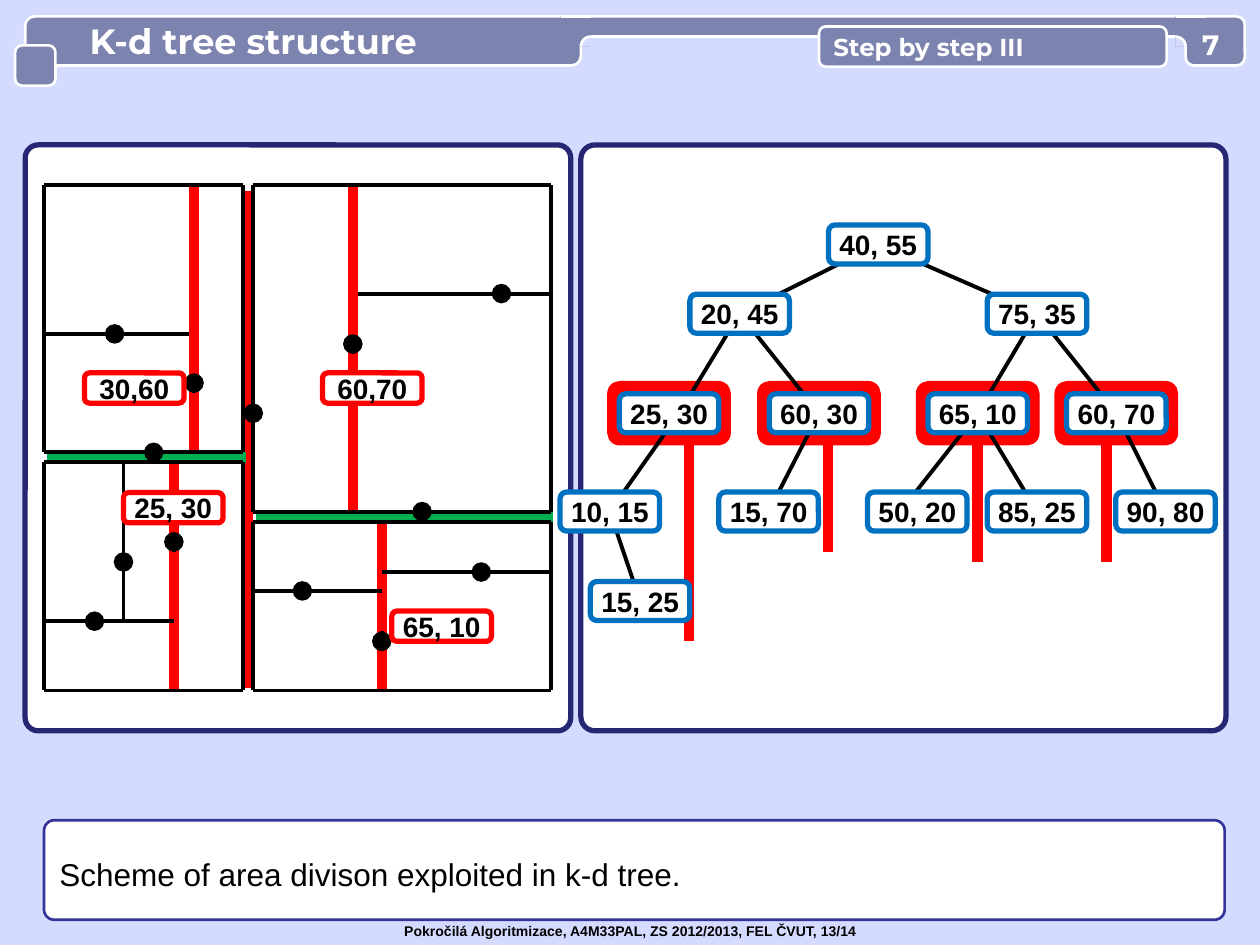
import math
import pptx
import pptx.dml.color
import pptx.enum.shapes
import pptx.enum.text
import pptx.oxml.ns
import pptx.util
from lxml import etree
from pptx.util import Inches

WHITE, BLACK, RED, GREEN = "FFFFFF", "000000", "FF0000", "00B050"
BLUE, NAVY, SLATE, PALE = "0070C0", "262673", "7D83AF", "D5DAFF"
ALIGN = pptx.enum.text.PP_ALIGN
PRESET = pptx.enum.shapes.MSO_SHAPE


def color(value):
    return pptx.dml.color.RGBColor.from_string(value)


def assign(target, values):
    for name, value in values.items():
        setattr(target, name, value)


def paint(shape, fill=None, line=None, width=1.5):
    shape.shadow.inherit = False
    if fill:
        shape.fill.solid()
        shape.fill.fore_color.rgb = color(fill)
    else:
        shape.fill.background()
    if line:
        shape.line.color.rgb = color(line)
        shape.line.width = pptx.util.Pt(width)
    else:
        shape.line.fill.background()


def add_box(page, box, fill, line=None, width=1.5, round_by=None, preset=PRESET.ROUNDED_RECTANGLE):
    shape = page.shapes.add_shape(preset, *map(Inches, box))
    if round_by is not None:
        shape.adjustments[0] = round_by
    paint(shape, fill, line, width)
    return shape


def write(shape, text, size, ink=BLACK, family="Arial", bold=True, align=ALIGN.LEFT,
          margins=(0.1, 0.05, 0.1, 0.05), spacing=1.0, wrap=True):
    left, top, right, bottom = map(Inches, margins)
    assign(shape.text_frame, {
        "margin_left": left, "margin_top": top, "margin_right": right, "margin_bottom": bottom,
        "word_wrap": wrap, "vertical_anchor": pptx.enum.text.MSO_ANCHOR.MIDDLE})
    para = shape.text_frame.paragraphs[0]
    assign(para, {"alignment": align, "line_spacing": spacing})
    span = para.add_run()
    span.text = text
    assign(span.font, {"size": pptx.util.Pt(size), "bold": bold, "name": family})
    span.font.color.rgb = color(ink)


def add_line(page, start, end, ink=BLACK, width=2.25, dot=False):
    line = page.shapes.add_connector(
        pptx.enum.shapes.MSO_CONNECTOR.STRAIGHT, *map(Inches, (*start, *end)))
    line.line.color.rgb = color(ink)
    line.line.width = pptx.util.Pt(width)
    if dot:
        etree.SubElement(line.line._get_or_add_ln(), pptx.oxml.ns.qn("a:tailEnd"),
                         type="oval", w="lg", len="lg")
    etree.SubElement(line._element.spPr, pptx.oxml.ns.qn("a:effectLst"))


def add_label(page, box, text, line):
    write(add_box(page, box, WHITE, line, 3), text, 16, align=ALIGN.CENTER, margins=(0, 0, 0, 0))


def draw_area(page, box):
    add_box(page, box, WHITE, NAVY, 3, 0.024)
    left, top = box[:2]

    def at(x, y):
        return left + x, top + y

    splits = [
        (1.77, 4.31, 1.77, 0.37, RED), (4.19, 2.95, 1.83, 2.95, GREEN),
        (1.75, 2.48, 0.17, 2.48, GREEN), (0.15, 1.5, 1.34, 1.5, BLACK),
        (2.6, 1.18, 4.17, 1.18, BLACK), (2.83, 2.99, 2.83, 4.33, RED),
        (1.18, 2.52, 1.18, 4.33, RED), (1.34, 0.32, 1.34, 2.44, RED),
        (2.6, 0.32, 2.6, 2.91, RED), (2.83, 3.39, 4.17, 3.39, BLACK),
        (1.81, 3.54, 2.83, 3.54, BLACK), (0.15, 3.78, 1.18, 3.78, BLACK),
        (0.78, 3.78, 0.78, 2.52, BLACK)]
    for x1, y1, x2, y2, ink in splits:
        add_line(page, at(x1, y1), at(x2, y2), ink, 2.25 if ink == BLACK else 6)

    cells = [(0.15, 0.32, 1.73, 2.44), (0.15, 2.52, 1.73, 4.33),
             (1.81, 0.32, 4.17, 2.91), (1.81, 2.99, 4.17, 4.33)]
    for x1, y1, x2, y2 in cells:
        corners = [at(x1, y1), at(x2, y1), at(x2, y2), at(x1, y2)]
        for index, corner in enumerate(corners):
            add_line(page, corners[index - 1], corner)

    points = [
        (0.71, 1.5, -0.32, 0), (3.15, 2.91, -0.08, 0), (2.6, 1.58, 0, 0.08),
        (3.78, 1.18, -0.32, 0), (2.83, 3.94, 0, -0.08), (3.62, 3.39, -0.32, 0),
        (2.2, 3.54, -0.32, 0), (1.02, 2.44, -0.08, 0), (1.34, 1.89, 0, 0.08),
        (1.18, 3.15, 0, 0.08), (0.55, 3.78, -0.32, 0), (0.78, 3.31, 0, -0.32),
        (1.81, 2.13, 0, 0.08)]
    for x, y, dx, dy in points:
        add_line(page, at(x + dx, y + dy), at(x, y), dot=True)

    labels = {"25, 30": (0.78, 2.76), "30,60": (0.47, 1.81),
              "65, 10": (2.91, 3.7), "60,70": (2.36, 1.81)}
    for text, place in labels.items():
        add_label(page, (*at(*place), 0.79, 0.24), text, RED)


def draw_tree(page, box):
    add_box(page, box, WHITE, NAVY, 3, 0.024)
    left, top = box[:2]
    nodes = {
        "40, 55": (2.36, 0.79), "20, 45": (1.26, 1.34), "75, 35": (3.62, 1.34),
        "25, 30": (0.7, 2.13), "60, 30": (1.89, 2.13), "65, 10": (3.15, 2.13),
        "60, 70": (4.25, 2.13), "10, 15": (0.23, 2.91), "15, 70": (1.49, 2.91),
        "50, 20": (2.67, 2.91), "85, 25": (3.62, 2.91), "90, 80": (4.64, 2.91),
        "15, 25": (0.47, 3.62)}
    joints = {**nodes, "25, 30": (0.78, 2.13), "50, 20": (2.59, 2.84)}
    children = {
        "40, 55": ["20, 45", "75, 35"], "20, 45": ["25, 30", "60, 30"],
        "75, 35": ["65, 10", "60, 70"], "25, 30": ["10, 15"], "60, 30": ["15, 70"],
        "65, 10": ["50, 20", "85, 25"], "60, 70": ["90, 80"], "10, 15": ["15, 25"]}
    stems = {"25, 30": (0.86, 2.36, 3.94), "60, 30": (1.96, 2.29, 3.23),
             "65, 10": (3.15, 2.36, 3.31), "60, 70": (4.17, 2.29, 3.31)}

    def at(x, y):
        return left + x, top + y

    def around(name, width, height):
        x, y = nodes[name]
        return (*at(x - width / 2, y - height / 2), width, height)

    for name in stems:
        add_box(page, around(name, 0.94, 0.47), RED, RED, 3)
    for parent, names in children.items():
        for name in names:
            add_line(page, at(*joints[parent]), at(*joints[name]))
    for x, start, end in stems.values():
        add_line(page, at(x, end), at(x, start), RED, 6)
    for name in nodes:
        add_label(page, around(name, 0.79, 0.31), name, BLUE)


def draw_fillet(page, box, side):
    left, top, width, height = box
    add_box(page, box, SLATE, preset=PRESET.RECTANGLE)
    add_line(page, (left, top), (left + width, top), WHITE, 1.5)
    x, y, radius = left + (width if side > 0 else 0), top + height, 0.08
    arc = [(Inches(x - side * radius * math.cos(turn)), Inches(y - radius * math.sin(turn)))
           for turn in (math.radians(step) for step in range(0, 91, 10))]
    wedge = page.shapes.build_freeform(Inches(x), Inches(y))
    wedge.add_line_segments(arc, close=True)
    paint(wedge.convert_to_shape(), PALE)
    curve = page.shapes.build_freeform(*arc[0])
    curve.add_line_segments(arc[1:], close=False)
    paint(curve.convert_to_shape(), None, WHITE)


def draw_header(page, box):
    left, top, width, height = box
    right = left + width
    title = add_box(page, (left + 0.08, top, 4.41, height), SLATE, WHITE, round_by=0.188)
    write(title, "K-d tree structure", 20, WHITE, "Montserrat", margins=(0.49, 0.05, 0.1, 0.05))
    add_box(page, (left + 4.49, top, 4.88, 0.16), SLATE, WHITE, round_by=0.5)
    draw_fillet(page, (left + 4.33, top, 0.24, 0.24), 1)
    add_box(page, (left, top + 0.23, 0.32, 0.32), SLATE, WHITE, round_by=0.17)
    add_box(page, (right - 0.47, top, 0.47, height), SLATE, WHITE, round_by=0.17)
    draw_fillet(page, (right - 0.55, top, 0.24, 0.24), -1)
    section = add_box(page, (left + 6.38, top + 0.08, 2.76, 0.32), SLATE, WHITE, round_by=0.17)
    write(section, "Step by step III", 14, WHITE, "Montserrat")
    number = page.shapes.add_textbox(*map(Inches, (right - 0.47, top + 0.09, 0.4, 0.27)))
    write(number, "7", 16, WHITE, "Montserrat", align=ALIGN.CENTER, margins=(0, 0, 0, 0))


def draw_caption(page, box):
    caption = add_box(page, box, WHITE, "333399", round_by=0.103)
    write(caption, "Scheme of area divison exploited in k-d tree.", 18, bold=False, spacing=1.2)


def draw_footer(page, box):
    footer = page.shapes.add_textbox(*map(Inches, box))
    write(footer, "Pokročilá Algoritmizace, A4M33PAL, ZS 2012/2013, FEL ČVUT, 13/14", 8, wrap=False)


def main():
    deck = pptx.Presentation()
    assign(deck, {"slide_width": Inches(10), "slide_height": Inches(7.5)})
    page = deck.slides.add_slide(deck.slide_layouts[6])
    page.background.fill.solid()
    page.background.fill.fore_color.rgb = color(PALE)
    draw_area(page, (0.2, 1.15, 4.33, 4.65))
    draw_tree(page, (4.61, 1.15, 5.12, 4.65))
    draw_caption(page, (0.35, 6.51, 9.37, 0.79))
    draw_header(page, (0.12, 0.13, 9.76, 0.39))
    draw_footer(page, (3.11, 7.27, 3.9, 0.24))
    deck.save("out.pptx")


if __name__ == "__main__":
    main()
